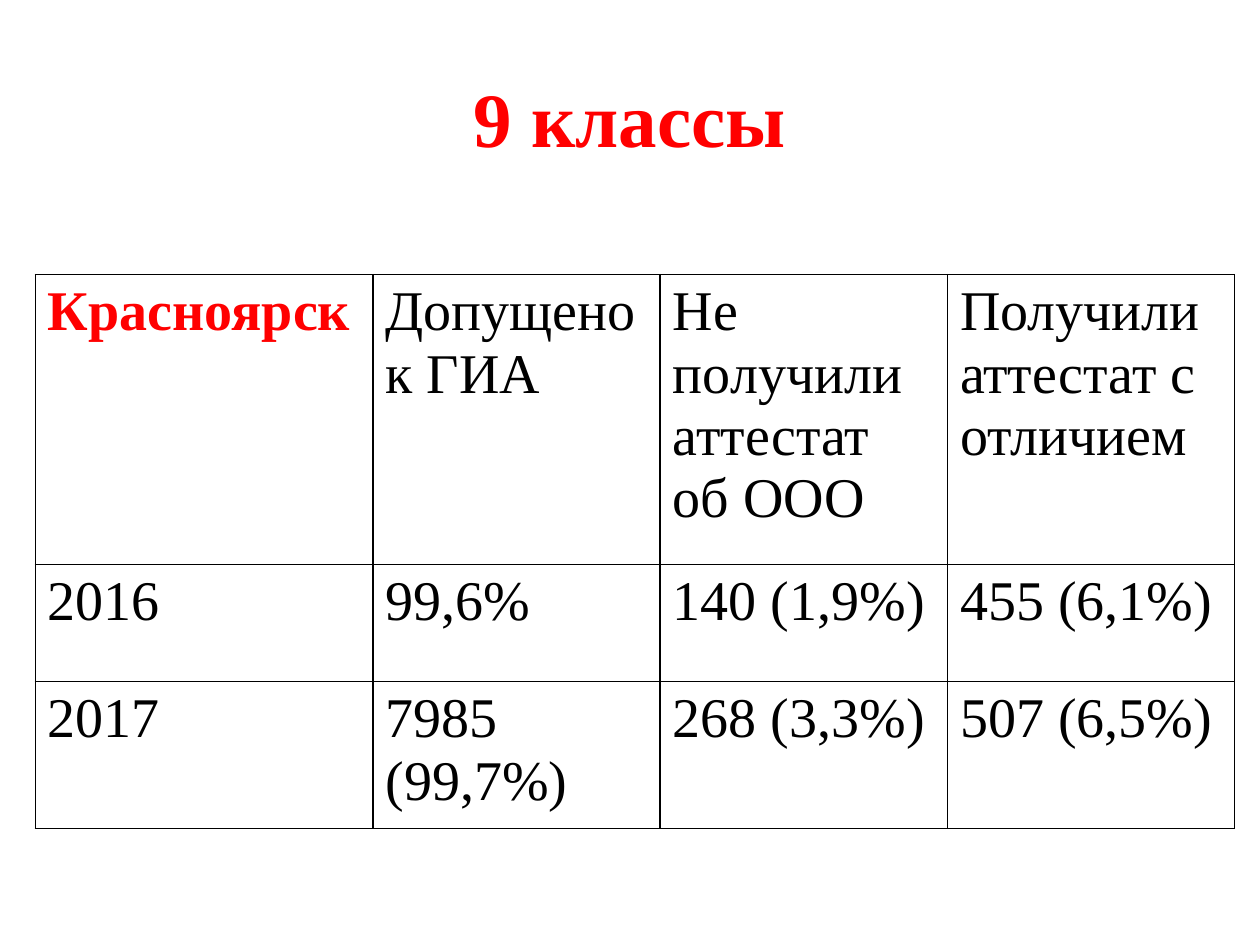
from lxml.etree import SubElement
from pptx import Presentation
from pptx.dml.color import RGBColor
from pptx.enum.text import MSO_ANCHOR, PP_ALIGN
from pptx.oxml.ns import qn
from pptx.util import Inches, Pt

RED = RGBColor(0xFF, 0x00, 0x00)
BLACK = RGBColor(0x00, 0x00, 0x00)
WHITE = RGBColor(0xFF, 0xFF, 0xFF)
FONT = "Times New Roman"


def add_run(paragraph, text, size, color, bold):
    run = paragraph.add_run()
    run.text = text
    run.font.name = FONT
    run.font.size = Pt(size)
    run.font.bold = bold
    run.font.color.rgb = color


def add_borders(cell):
    properties = cell._tc.get_or_add_tcPr()
    for side in ("lnL", "lnR", "lnT", "lnB"):
        line = SubElement(properties, qn(f"a:{side}"), w=str(Pt(1)))
        fill = SubElement(line, qn("a:solidFill"))
        SubElement(fill, qn("a:srgbClr"), val=str(BLACK))


prs = Presentation()
prs.slide_width = Inches(10)
prs.slide_height = Inches(7.5)
slide = prs.slides.add_slide(prs.slide_layouts[6])

title = slide.shapes.add_textbox(Inches(0.5), Inches(0.3), Inches(9), Inches(1.25)).text_frame
title.word_wrap = True
title.vertical_anchor = MSO_ANCHOR.MIDDLE
title.paragraphs[0].alignment = PP_ALIGN.CENTER
add_run(title.paragraphs[0], "9 классы", 44, RED, True)

results = [
    ["Красноярск", "Допущено к ГИА", "Не получили аттестат об ООО", "Получили аттестат с отличием"],
    ["2016", "99,6%", "140 (1,9%)", "455 (6,1%)"],
    ["2017", "7985 (99,7%)", "268 (3,3%)", "507 (6,5%)"],
]
column_widths = [2.68, 2.28, 2.28, 2.28]
row_heights = [2.3, 0.93, 0.93]

table = slide.shapes.add_table(
    len(results), len(column_widths), Inches(0.28), Inches(2.18),
    Inches(sum(column_widths)), Inches(sum(row_heights)),
).table
table.first_row = False
table.horz_banding = False
for column, width in zip(table.columns, column_widths):
    column.width = Inches(width)
for row, height in zip(table.rows, row_heights):
    row.height = Inches(height)

for r, values in enumerate(results):
    for c, value in enumerate(values):
        cell = table.cell(r, c)
        add_borders(cell)
        cell.fill.solid()
        cell.fill.fore_color.rgb = WHITE
        is_city = r == c == 0
        add_run(cell.text_frame.paragraphs[0], value, 32, RED if is_city else BLACK, is_city)

prs.save("out.pptx")
